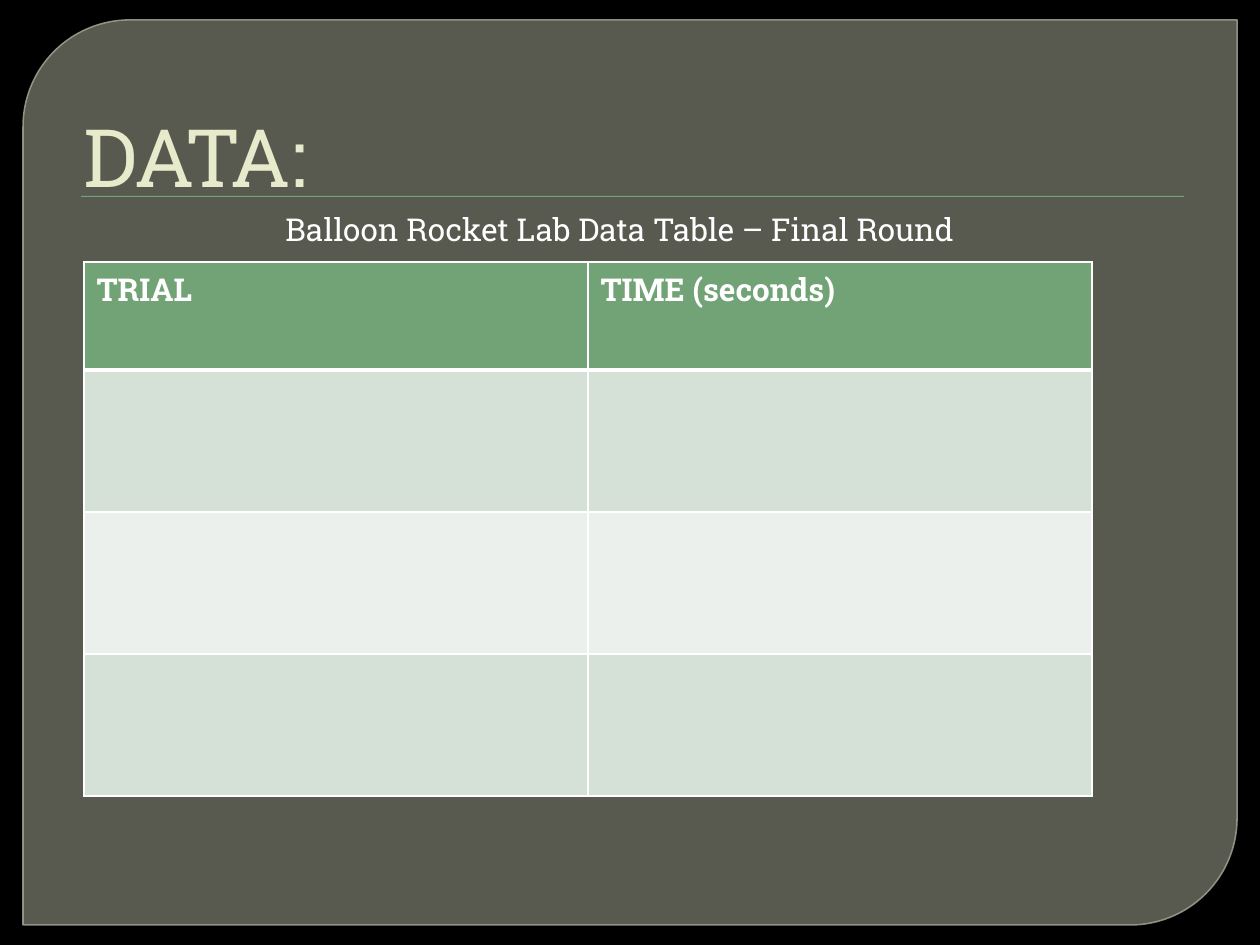
import pptx
import pptx.util
import pptx.dml.color
import pptx.enum.shapes
import pptx.enum.text
import pptx.oxml
import pptx.oxml.ns

SCALE = 914400 / 126
FONT = "Roboto Slab"
COLORS = {
    "background": "000000",
    "panel": "888B7B",
    "panel_line": "9DA090",
    "green": "72A376",
    "title": "E7EACB",
    "white": "FFFFFF",
    "dark_band": "D5E0D6",
    "light_band": "EBF0EC",
}


def px(*lengths):
    return [pptx.util.Emu(round(length * SCALE)) for length in lengths]


def paint(color_format, name, alpha=None):
    """Set a colour and, if given, its opacity in percent."""
    color_format.rgb = pptx.dml.color.RGBColor.from_string(COLORS[name])
    if alpha:
        for color in color_format._xFill.iter(pptx.oxml.ns.qn("a:srgbClr")):
            color.append(pptx.oxml.parse_xml(
                f'<a:alpha {pptx.oxml.ns.nsdecls("a")} val="{alpha * 1000}"/>'))


presentation = pptx.Presentation()
presentation.slide_width, presentation.slide_height = px(1260, 945)
slide = presentation.slides.add_slide(presentation.slide_layouts[5])
shapes = slide.shapes
slide.background.fill.solid()
paint(slide.background.fill.fore_color, "background")

# Panel with two rounded corners
panel = shapes.add_shape(
    pptx.enum.shapes.MSO_SHAPE.ROUND_2_DIAG_RECTANGLE, *px(23, 20, 1214, 905))
panel.adjustments[0] = 0.118
panel.adjustments[1] = 0
panel.shadow.inherit = False
panel.fill.solid()
paint(panel.fill.fore_color, "panel", 65)
panel.line.width = pptx.util.Pt(0.87)
panel.line.fill.solid()
paint(panel.line.fill.fore_color, "panel_line", 88)

# Rule under the title
rule = shapes.add_shape(pptx.enum.shapes.MSO_SHAPE.RECTANGLE, *px(81, 196, 1103, 1))
rule.shadow.inherit = False
rule.fill.solid()
paint(rule.fill.fore_color, "green")
rule.line.fill.background()

# Title, placed in front of the panel
title = shapes.title
rule.element.addnext(title.element)
title.left, title.top, title.width, title.height = px(63, 53, 1134, 157)
title.text_frame.text = "DATA:"
title.text_frame.vertical_anchor = pptx.enum.text.MSO_ANCHOR.BOTTOM
title.text_frame.auto_size = pptx.enum.text.MSO_AUTO_SIZE.NONE
title_paragraph = title.text_frame.paragraphs[0]
title_paragraph.alignment = pptx.enum.text.PP_ALIGN.LEFT
title_paragraph._p.get_or_add_pPr().set("marL", str(px(8)[0]))
title_font = title_paragraph.runs[0].font
title_font.name = FONT
title_font.size = pptx.util.Pt(46)
paint(title_font.color, "title")

# Data table
headings = ["TRIAL", "TIME (seconds)"]
row_heights = px(108, 142, 142, 142)
row_fills = ["green", "dark_band", "light_band", "dark_band"]
table = shapes.add_table(4, 2, *px(84, 262, 1008, 534)).table
for column in table.columns:
    column.width = px(504)[0]
for row_index, row in enumerate(table.rows):
    row.height = row_heights[row_index]
    for column_index, cell in enumerate(row.cells):
        # The line below the heading row is thicker
        widths = {"L": 1, "R": 1,
                  "T": 3 if row_index == 1 else 1,
                  "B": 3 if row_index == 0 else 1}
        properties = cell._tc.get_or_add_tcPr()
        for side, width in widths.items():
            properties.append(pptx.oxml.parse_xml(
                f'<a:ln{side} {pptx.oxml.ns.nsdecls("a")} w="{pptx.util.Pt(width)}">'
                f'<a:solidFill><a:srgbClr val="{COLORS["white"]}"/></a:solidFill>'
                f'</a:ln{side}>'))
        cell.fill.solid()
        paint(cell.fill.fore_color, row_fills[row_index])
        if row_index == 0:
            cell.text_frame.text = headings[column_index]
            font = cell.text_frame.paragraphs[0].runs[0].font
            font.name = FONT
            font.size = pptx.util.Pt(18)
            font.bold = True
            paint(font.color, "white")

# Table caption
caption = shapes.add_textbox(*px(273, 204, 766, 51))
caption.text_frame.word_wrap = True
caption.text_frame.auto_size = pptx.enum.text.MSO_AUTO_SIZE.SHAPE_TO_FIT_TEXT
caption.text_frame.text = "Balloon Rocket Lab Data Table – Final Round"
caption_font = caption.text_frame.paragraphs[0].runs[0].font
caption_font.name = FONT
caption_font.size = pptx.util.Pt(18)
paint(caption_font.color, "white")

presentation.save("out.pptx")
